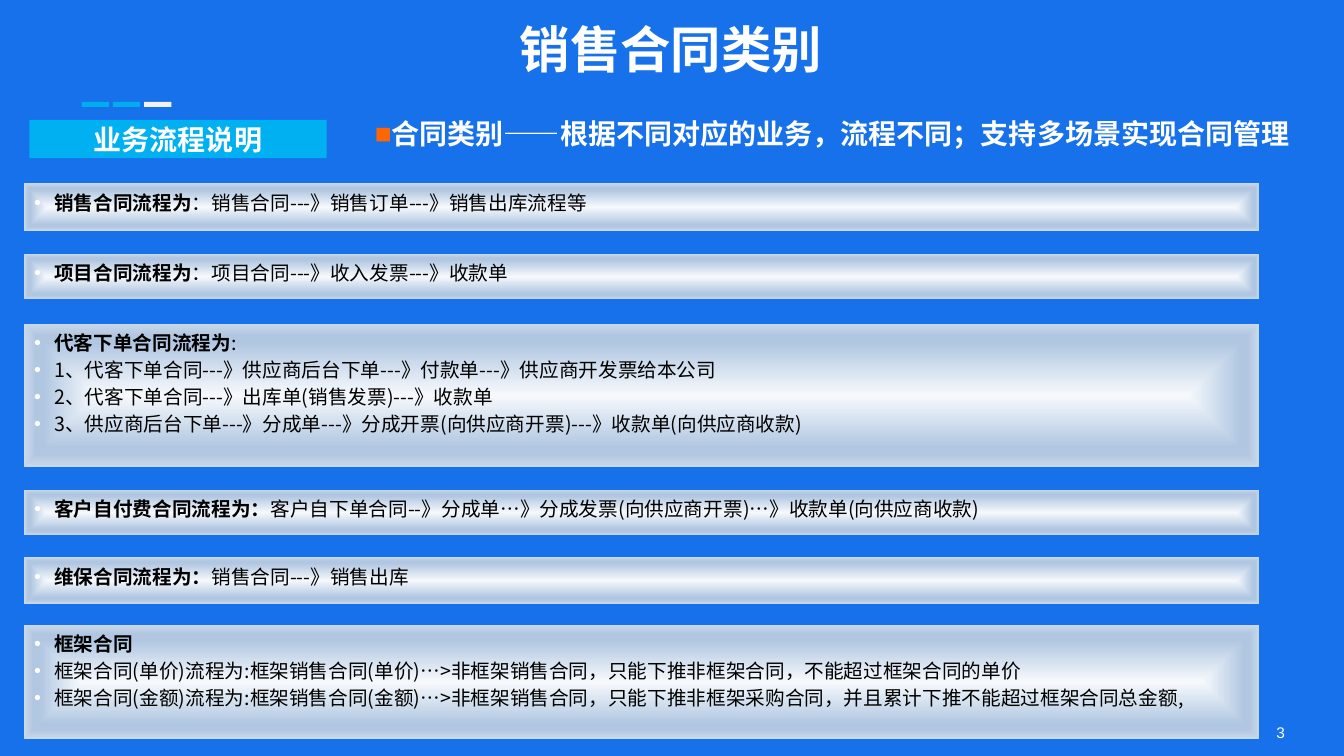
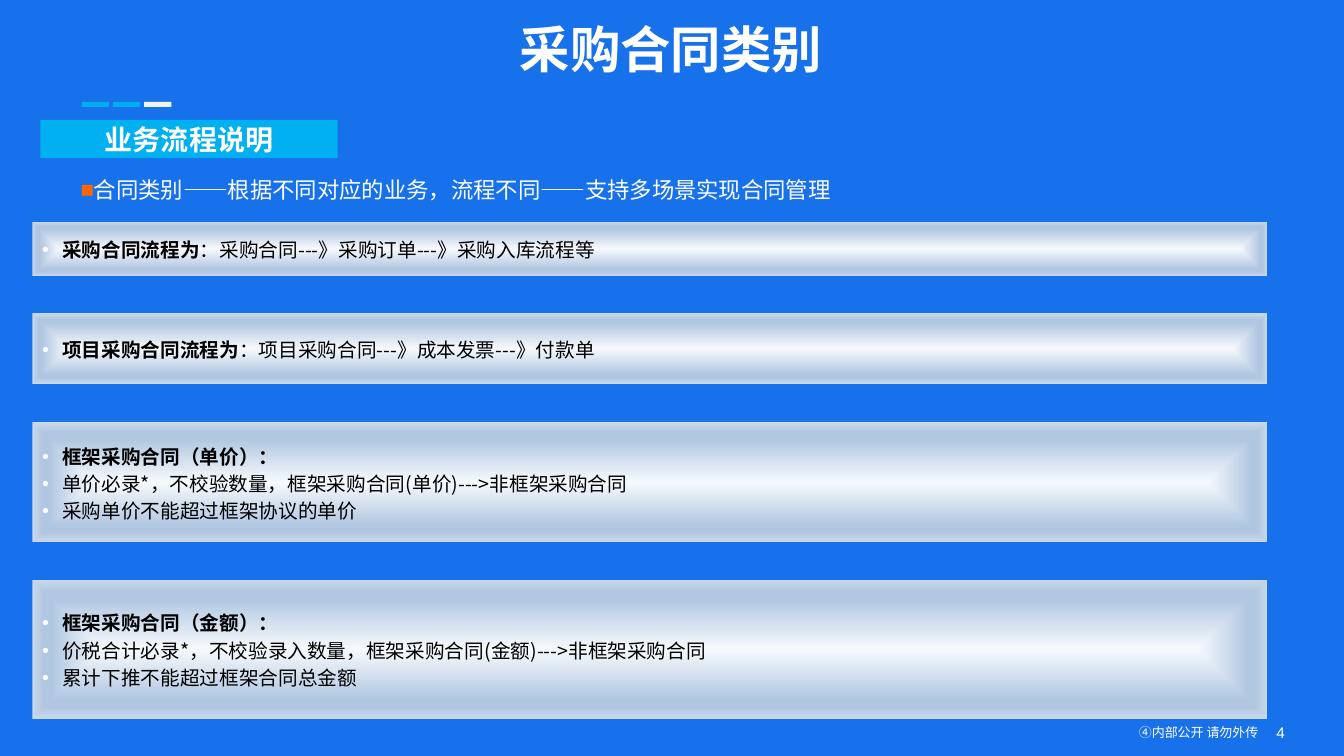
from dataclasses import dataclass

import pptx
import pptx.dml.color
import pptx.enum.shapes
import pptx.enum.text
import pptx.oxml
import pptx.oxml.ns
import pptx.util

EMU_PER_PX = 9144  # 100 px to the inch
ALIGN = pptx.enum.text.PP_ALIGN
ANCHOR = pptx.enum.text.MSO_ANCHOR
TITLE_ONLY = 5


@dataclass(frozen=True)
class Theme:
    background: str = "1771EA"
    white: str = "FFFFFF"
    black: str = "000000"
    label: str = "00B0F0"
    bar: str = "00AEEF"
    bar_last: str = "F2F2F2"
    square: str = "FF6600"
    panel_stops: tuple = ((0, "F6F9FC"), (74, "B0C6E1"), (83, "B0C6E1"), (100, "CAD9EB"))
    font: str = "Noto Sans CJK SC"
    number_font: str = "Arial"
    title_size: float = 36
    label_size: float = 20
    body_size: float = 14
    number_size: float = 11
    footer_size: float = 9.3


THEME = Theme()


def px(length):
    return pptx.util.Emu(length * EMU_PER_PX)


def rgb(value):
    return pptx.dml.color.RGBColor.from_string(value)


def make_element(xml):
    return pptx.oxml.parse_xml(xml.replace(">", f" {pptx.oxml.ns.nsdecls('a')}>", 1)
                               if not xml.split(">")[0].endswith("/")
                               else xml.replace("/>", f" {pptx.oxml.ns.nsdecls('a')}/>", 1))


def add_bullet(paragraph, character, color, left, indent):
    properties = paragraph._p.get_or_add_pPr()
    properties.set("marL", str(px(left)))
    properties.set("indent", str(px(indent)))
    for xml in (f'<a:buClr><a:srgbClr val="{color}"/></a:buClr>',
                '<a:buFont typeface="Arial"/>',
                f'<a:buChar char="{character}"/>'):
        properties.append(make_element(xml))


def write_text(shape, paragraphs, *, size, color=THEME.white, font=THEME.font,
               align=ALIGN.LEFT, anchor=ANCHOR.TOP, insets=(10, 5, 10, 5),
               spacing=None, space_before=0, bullet=None):
    """Fill a shape with paragraphs, each a sequence of (text, bold) runs."""
    frame = shape.text_frame
    frame.word_wrap = True
    frame.auto_size = pptx.enum.text.MSO_AUTO_SIZE.NONE
    frame.vertical_anchor = anchor
    frame.margin_left, frame.margin_top, frame.margin_right, frame.margin_bottom = map(px, insets)
    for index, runs in enumerate(paragraphs):
        paragraph = frame.add_paragraph() if index else frame.paragraphs[0]
        paragraph.alignment = align
        if spacing:
            paragraph.line_spacing = spacing
        if index and space_before:
            paragraph.space_before = pptx.util.Pt(space_before)
        if bullet:
            add_bullet(paragraph, *bullet)
        for text, bold in runs:
            run = paragraph.add_run()
            run.text = text
            run.font.name = font
            run.font.size = pptx.util.Pt(size)
            run.font.bold = bold
            run.font.color.rgb = rgb(color)
            run.font._element.find(pptx.oxml.ns.qn("a:latin")).addnext(
                make_element(f'<a:ea typeface="{font}"/>'))


def add_rectangle(slide, box, color):
    shape = slide.shapes.add_shape(pptx.enum.shapes.MSO_SHAPE.RECTANGLE, *map(px, box))
    shape.shadow.inherit = False
    shape.fill.solid()
    shape.fill.fore_color.rgb = rgb(color)
    shape.line.fill.background()
    return shape


def add_text(slide, box, text, *, bold=False, **options):
    write_text(slide.shapes.add_textbox(*map(px, box)), [[(text, bold)]], **options)


def add_panel(slide, box, lines, anchor):
    """Add a glowing panel whose lines are (bold heading, plain detail) pairs."""
    panel = add_rectangle(slide, box, THEME.panel_stops[0][1])
    stops = "".join(f'<a:gs pos="{position * 1000}"><a:srgbClr val="{color}"/></a:gs>'
                    for position, color in THEME.panel_stops)
    properties = panel._element.spPr
    properties.replace(
        properties.find(pptx.oxml.ns.qn("a:solidFill")),
        make_element(f'<a:gradFill rotWithShape="1"><a:gsLst>{stops}</a:gsLst><a:path path="shape">'
                     '<a:fillToRect l="50000" t="50000" r="50000" b="50000"/></a:path></a:gradFill>'))
    paragraphs = [[(text, bold) for text, bold in zip(line, (True, False)) if text]
                  for line in lines]
    write_text(panel, paragraphs, size=THEME.body_size, color=THEME.black, anchor=anchor,
               insets=(10, 7, 10, 5), spacing=1.0, space_before=2.6,
               bullet=("•", THEME.white, 20, -20))


def add_summary(slide, box, text, **options):
    add_text(slide, box, text, spacing=1.3, bullet=("■", THEME.square, 0, 38), **options)


def add_frame(presentation, title, number, label_left):
    """Add a slide with its title, accent bars, label and page number."""
    slide = presentation.slides.add_slide(presentation.slide_layouts[TITLE_ONLY])
    heading = slide.shapes.title
    heading.left, heading.top, heading.width, heading.height = map(px, (198, 18, 935, 83))
    write_text(heading, [[(title, True)]], size=THEME.title_size, align=ALIGN.CENTER,
               insets=(13, 7, 13, 7), spacing=0.9)
    for index, color in enumerate((THEME.bar, THEME.bar, THEME.bar_last)):
        add_rectangle(slide, (81 + 31 * index, 101, 27, 5), color)
    label = add_rectangle(slide, (label_left, 119, 295, 38), THEME.label)
    write_text(label, [[("业务流程说明", True)]], size=THEME.label_size,
               align=ALIGN.CENTER, anchor=ANCHOR.MIDDLE)
    add_text(slide, (1266, 717, 67, 19), str(number), size=THEME.number_size,
             font=THEME.number_font, anchor=ANCHOR.MIDDLE, insets=(0, 0, 0, 0))
    return slide


def add_panels(slide, left, panels, anchor):
    for top, height, lines in panels:
        add_panel(slide, (left, top, 1225, height), lines, anchor)


SALES_PANELS = (
    (182, 47, [("销售合同流程为", "：销售合同---》销售订单---》销售出库流程等")]),
    (252, 45, [("项目合同流程为", "：项目合同---》收入发票---》收款单")]),
    (321, 142, [
        ("代客下单合同流程为", ":"),
        ("", "1、代客下单合同---》供应商后台下单---》付款单---》供应商开发票给本公司"),
        ("", "2、代客下单合同---》出库单(销售发票)---》收款单"),
        ("", "3、供应商后台下单---》分成单---》分成开票(向供应商开票)---》收款单(向供应商收款)")]),
    (486, 45, [("客户自付费合同流程为：",
                "客户自下单合同--》分成单…》分成发票(向供应商开票)…》收款单(向供应商收款)")]),
    (553, 46, [("维保合同流程为：", "销售合同---》销售出库")]),
    (620, 113, [
        ("框架合同", ""),
        ("", "框架合同(单价)流程为:框架销售合同(单价)…>非框架销售合同，"
             "只能下推非框架合同，不能超过框架合同的单价"),
        ("", "框架合同(金额)流程为:框架销售合同(金额)…>非框架销售合同，"
             "只能下推非框架采购合同，并且累计下推不能超过框架合同总金额,")]),
)

PURCHASE_PANELS = (
    (220, 54, [("采购合同流程为", "：采购合同---》采购订单---》采购入库流程等")]),
    (311, 70, [("项目采购合同流程为", "：项目采购合同---》成本发票---》付款单")]),
    (419, 119, [
        ("框架采购合同（单价）：", ""),
        ("", "单价必录*，不校验数量，框架采购合同(单价)--->非框架采购合同"),
        ("", "采购单价不能超过框架协议的单价")]),
    (575, 138, [
        ("框架采购合同（金额）：", ""),
        ("", "价税合计必录*，不校验录入数量，框架采购合同(金额)--->非框架采购合同"),
        ("", "累计下推不能超过框架合同总金额")]),
)


def add_sales_slide(presentation):
    slide = add_frame(presentation, "销售合同类别", 3, label_left=29)
    add_summary(slide, (324, 101, 1003, 71),
                "合同类别——根据不同对应的业务，流程不同；支持多场景实现合同管理",
                size=20, bold=True)
    add_panels(slide, 24, SALES_PANELS, ANCHOR.TOP)


def add_purchase_slide(presentation):
    slide = add_frame(presentation, "采购合同类别", 4, label_left=40)
    add_summary(slide, (32, 162, 829, 49),
                "合同类别——根据不同对应的业务，流程不同——支持多场景实现合同管理", size=16)
    add_panels(slide, 32, PURCHASE_PANELS, ANCHOR.MIDDLE)
    add_text(slide, (1012, 716, 237, 19), "④内部公开 请勿外传", size=THEME.footer_size,
             align=ALIGN.RIGHT, anchor=ANCHOR.MIDDLE, insets=(1, 1, 1, 1),
             spacing=pptx.util.Pt(13.3))


def main():
    presentation = pptx.Presentation()
    presentation.slide_width, presentation.slide_height = px(1333), px(750)
    background = presentation.slide_master.background.fill
    background.solid()
    background.fore_color.rgb = rgb(THEME.background)
    add_sales_slide(presentation)
    add_purchase_slide(presentation)
    presentation.save("out.pptx")


if __name__ == "__main__":
    main()
